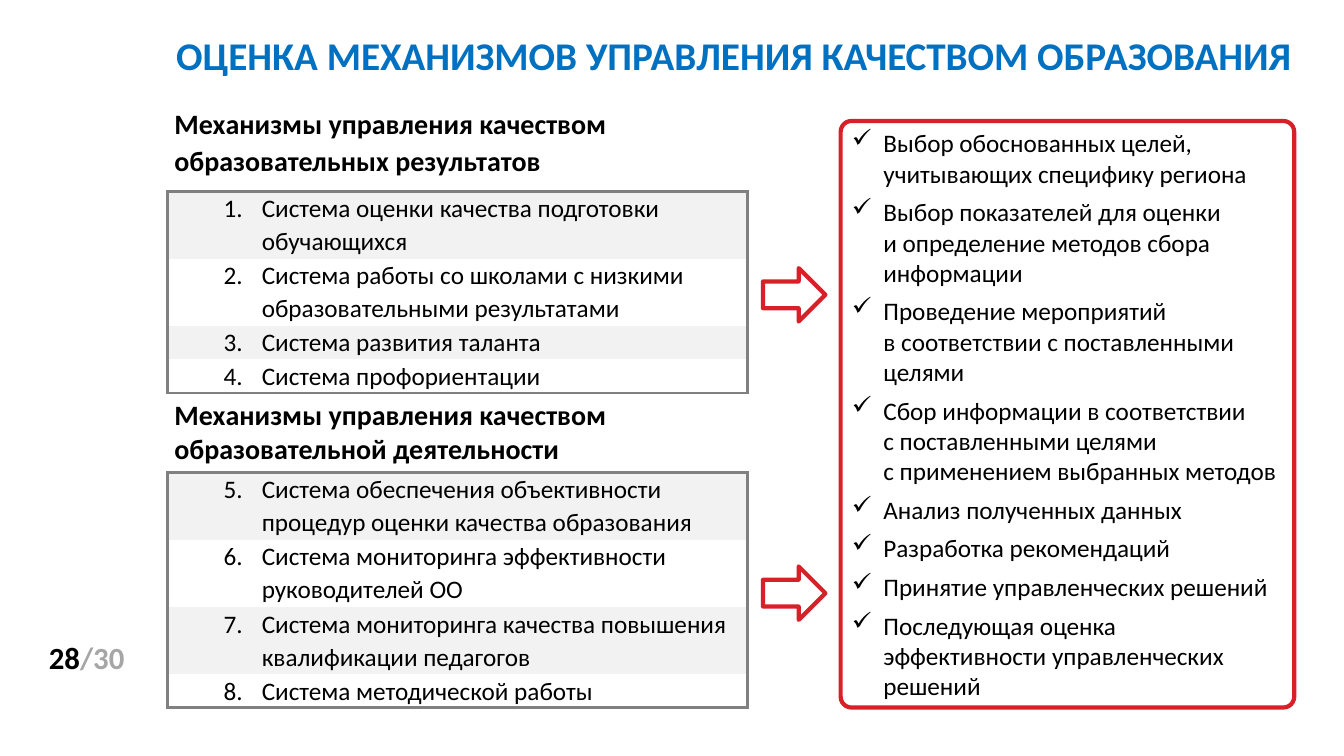
from lxml.etree import SubElement as Sub
from pptx import Presentation
from pptx.dml.color import RGBColor as RGB
from pptx.enum.shapes import MSO_SHAPE as Shape
from pptx.enum.text import MSO_ANCHOR as Anchor, PP_ALIGN as Align
from pptx.oxml import parse_xml
from pptx.oxml.ns import nsdecls, qn
from pptx.util import Pt

HUES = {"blue": "0070C0", "red": "D82028", "black": "000000", "white": "FFFFFF",
        "pale": "F2F2F2", "grey": "808080", "mute": "A6A6A6"}

TITLE = "ОЦЕНКА МЕХАНИЗМОВ УПРАВЛЕНИЯ КАЧЕСТВОМ ОБРАЗОВАНИЯ"
GROUPS = [
    ("Механизмы управления качеством образовательных результатов", 70.5,
     {"line_spacing": 1.07},
     [("Система оценки качества подготовки обучающихся", 48),
      ("Система работы со школами с низкими образовательными результатами", 48),
      ("Система развития таланта", 24),
      ("Система профориентации", 24)]),
    ("Механизмы управления качеством образовательной деятельности", 57,
     {"space_before": Pt(6), "space_after": Pt(6)},
     [("Система обеспечения объективности процедур оценки качества образования", 48),
      ("Система мониторинга эффективности руководителей ОО", 48),
      ("Система мониторинга качества повышения квалификации педагогов", 48),
      ("Система методической работы", 24)]),
]
STEPS = [
    "Выбор обоснованных целей, учитывающих специфику региона",
    "Выбор показателей для оценки \nи определение методов сбора информации",
    "Проведение мероприятий \nв соответствии с поставленными целями",
    "Сбор информации в соответствии \nс поставленными целями \nс применением выбранных методов",
    "Анализ полученных данных",
    "Разработка рекомендаций",
    "Принятие управленческих решений",
    "Последующая оценка эффективности управленческих решений",
]


def rgb(hue):
    return RGB.from_string(HUES[hue])


def apply(item, **vals):
    for key, val in vals.items():
        setattr(item, key, val)


def style(run, size, hue="black", bold=False):
    apply(run.font, name="Calibri", size=Pt(size), bold=bold)
    run.font.color.rgb = rgb(hue)


def write(para, text, size, hue="black", bold=False, **form):
    para.text = text
    apply(para, **form)
    for run in para.runs:
        style(run, size, hue, bold)


def inset(item, x, y):
    apply(item, margin_left=Pt(x), margin_right=Pt(x),
          margin_top=Pt(y), margin_bottom=Pt(y))


def mark(para, left, hang, tag, **attrs):
    """Give a paragraph a hanging indent and a bullet."""
    props = para._p.get_or_add_pPr()
    props.set("marL", str(Pt(left)))
    props.set("indent", str(-Pt(hang)))
    Sub(props, qn(tag), attrs)


def add_text(slide, box):
    frame = slide.shapes.add_textbox(*map(Pt, box)).text_frame
    frame.word_wrap = True
    inset(frame, 7.2, 3.6)
    return frame


def add_outline(slide, kind, box):
    shape = slide.shapes.add_shape(kind, *map(Pt, box))
    shape.shadow.inherit = False
    shape.fill.background()
    shape.line.color.rgb = rgb("red")
    shape.line.width = Pt(3)
    return shape


def set_edges(cell, sides):
    """Draw grey borders on the sides named, and none elsewhere."""
    props = cell._tc.get_or_add_tcPr()
    for spot, side in enumerate("LRTB"):
        fill = (f'<a:solidFill><a:srgbClr val="{HUES["grey"]}"/></a:solidFill>'
                if side in sides else "<a:noFill/>")
        props.insert(spot, parse_xml(
            f'<a:ln{side} {nsdecls("a")} w="{Pt(2.25)}">{fill}</a:ln{side}>'))


def add_title(slide, box):
    write(add_text(slide, box).paragraphs[0], TITLE, 28, "blue", True,
          line_spacing=Pt(28), space_after=Pt(12))


def add_number(slide, box):
    para = add_text(slide, box).paragraphs[0]
    para.alignment = Align.CENTER
    for text, hue in (("28", "black"), ("/30", "mute")):
        run = para.add_run()
        run.text = text
        style(run, 22, hue, True)


def add_systems(slide, box):
    count = sum(1 + len(items) for *_, items in GROUPS)
    table = slide.shapes.add_table(count, 1, *map(Pt, box)).table
    apply(table, first_row=False, horz_banding=False)
    row, num = 0, 0

    def fill_row(text, tall, size, bold, sides, **form):
        nonlocal row
        table.rows[row].height = Pt(tall)
        cell = table.cell(row, 0)
        inset(cell, 5, 0)
        cell.fill.background()
        set_edges(cell, sides)
        write(cell.text_frame.paragraphs[0], text, size, bold=bold, **form)
        row += 1
        return cell

    for head, tall, form, items in GROUPS:
        # Heading row
        cell = fill_row(head, tall, 20, True, "TB" if row else "B", **form)
        cell.vertical_anchor = Anchor.MIDDLE
        # Numbered rows, every other one shaded
        for spot, (text, tall) in enumerate(items):
            num += 1
            sides = "LR" + "T" * (spot == 0) + "B" * (spot == len(items) - 1)
            cell = fill_row(text, tall, 18, False, sides, line_spacing=1.07)
            mark(cell.text_frame.paragraphs[0], 62.5, 27.25, "a:buAutoNum",
                 type="arabicPeriod", startAt=str(num))
            if spot % 2 == 0:
                cell.fill.solid()
                cell.fill.fore_color.rgb = rgb("pale")


def add_steps(slide, box):
    panel = add_outline(slide, Shape.ROUNDED_RECTANGLE, box)
    panel.adjustments[0] = 0.024
    panel.fill.solid()
    panel.fill.fore_color.rgb = rgb("white")
    frame = panel.text_frame
    apply(frame, word_wrap=True, vertical_anchor=Anchor.MIDDLE)
    inset(frame, 5.75, 2.9)
    for spot, text in enumerate(STEPS):
        para = frame.add_paragraph() if spot else frame.paragraphs[0]
        write(para, text, 18, alignment=Align.LEFT, space_after=Pt(6))
        mark(para, 22.5, 22.5, "a:buChar", char="✓")


def main():
    deck = Presentation()
    apply(deck, slide_width=Pt(960), slide_height=Pt(540))
    slide = deck.slides.add_slide(deck.slide_layouts[6])
    add_title(slide, (118.8, 24.5, 823.7, 386))
    add_number(slide, (20.9, 452.9, 82, 33.8))
    add_steps(slide, (600.5, 86.4, 324, 419))
    add_systems(slide, (119.5, 66.2, 414.7, 439.5))
    # Arrows from each group to the steps
    for top in (191.5, 404.6):
        add_outline(slide, Shape.RIGHT_ARROW, (545, top, 44.6, 38.2))
    deck.save("out.pptx")


if __name__ == "__main__":
    main()
